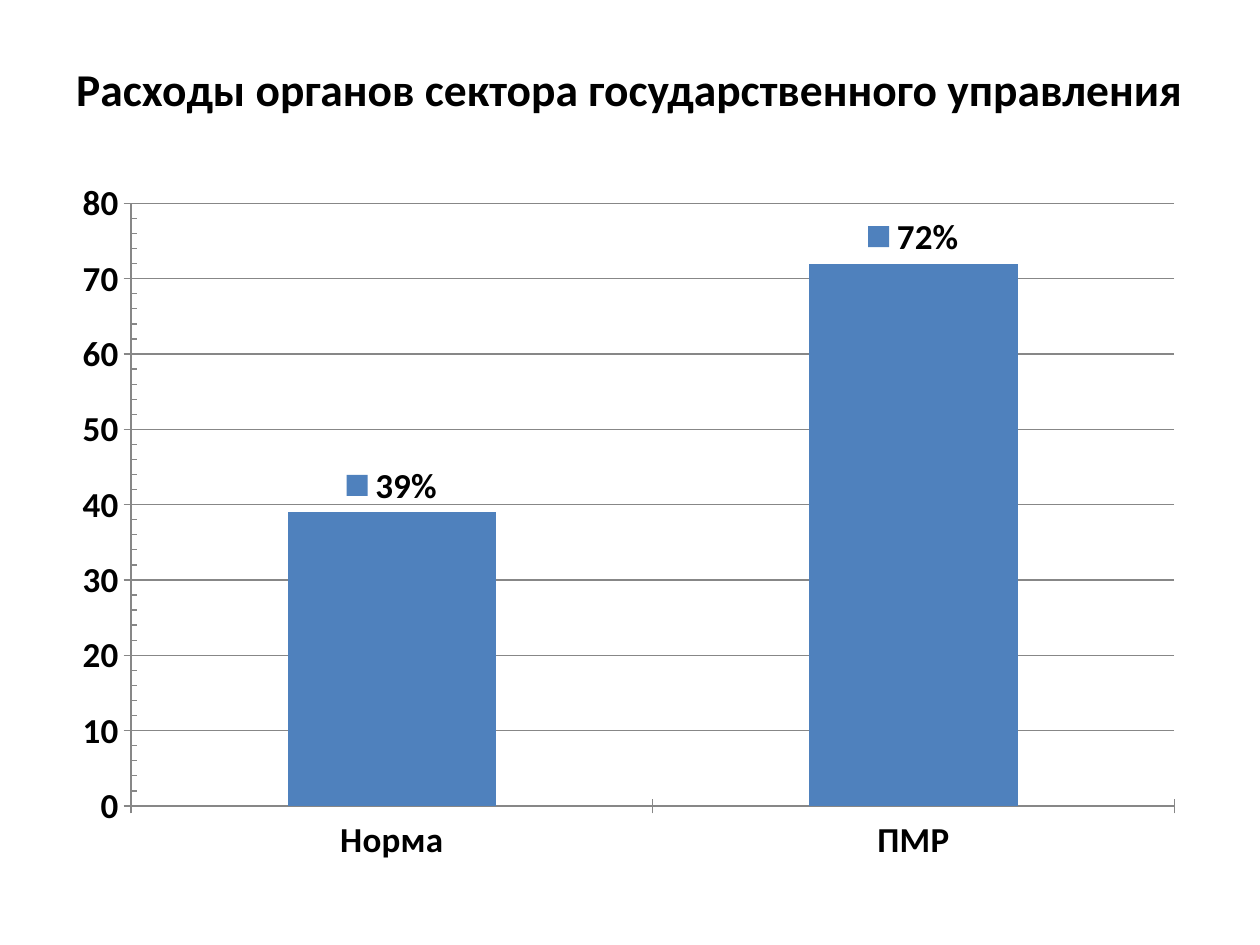
from lxml import etree
from pptx import Presentation, util as u
from pptx.chart.data import CategoryChartData
from pptx.dml.color import RGBColor
from pptx.enum import chart as ch, text
from pptx.oxml import parse_xml

PX = u.Inches(1) // 126
FONT, INK, GREY, BLUE = "Calibri", "000000", "878787", "4F81BD"
NS = "http://schemas.openxmlformats.org/drawingml/2006/chart"


def rgb(code):
    return RGBColor.from_string(code)


def style(font, size):
    font.name, font.size, font.bold = FONT, u.Pt(size), True
    font.color.rgb = rgb(INK)


deck = Presentation()
deck.slide_width, deck.slide_height = u.Inches(10), u.Inches(7.5)
slide = deck.slides.add_slide(deck.slide_layouts[6])

# Title
box = slide.shapes.add_textbox(63 * PX, 38 * PX, 1134 * PX, 100 * PX)
frame = box.text_frame
frame.word_wrap = True
frame.vertical_anchor = text.MSO_ANCHOR.MIDDLE
para = frame.paragraphs[0]
para.alignment = text.PP_ALIGN.CENTER
run = para.add_run()
run.text = "Расходы органов сектора государственного управления"
style(run.font, 26)

# Column chart
data = CategoryChartData()
data.categories = ["Норма", "ПМР"]
data.add_series("Ряд 1", [39, 72])
left, top, wide, high = 63, 168, 1134, 709
chart = slide.shapes.add_chart(
    ch.XL_CHART_TYPE.COLUMN_CLUSTERED,
    left * PX, top * PX, wide * PX, high * PX, data).chart
chart.has_title = chart.has_legend = False
style(chart.font, 20)

plot = chart.plots[0]
plot.gap_width = 150
plot.vary_by_categories = False
bars = plot.series[0]
bars.format.fill.solid()
bars.format.fill.fore_color.rgb = rgb(BLUE)

# Labels with colour keys
tags = bars.data_labels
tags.show_value = tags.show_legend_key = True
tags.number_format, tags.number_format_is_linked = '0"%"', False
tags.position = ch.XL_LABEL_POSITION.OUTSIDE_END
style(tags.font, 20)

# Axes and grid
mark = ch.XL_TICK_MARK
cats, vals = chart.category_axis, chart.value_axis
cats.major_tick_mark, vals.major_tick_mark = mark.CROSS, mark.OUTSIDE
vals.minimum_scale, vals.maximum_scale = 0, 80
vals.major_unit, vals.minor_unit = 10, 2
vals.has_major_gridlines = True
for axis in (cats, vals):
    axis.minor_tick_mark = mark.INSIDE
    axis.format.line.color.rgb = rgb(GREY)
    style(axis.tick_labels.font, 20)
vals.major_gridlines.format.line.color.rgb = rgb(GREY)

# Plot area, as shares of the chart frame
area = chart._chartSpace.chart.plotArea
for old in area.findall(f"{{{NS}}}layout"):
    area.remove(old)
layout = parse_xml(f'<c:layout xmlns:c="{NS}"><c:manualLayout/></c:layout>')
parts = [("layoutTarget", "inner"), ("xMode", "edge"), ("yMode", "edge"),
         ("x", round((134 - left) / wide, 2)), ("y", round((203 - top) / high, 2)),
         ("w", round(1040 / wide, 2)), ("h", round(603 / high, 2))]
for name, val in parts:
    etree.SubElement(layout[0], f"{{{NS}}}{name}").set("val", str(val))
area.insert(0, layout)

deck.save("out.pptx")
